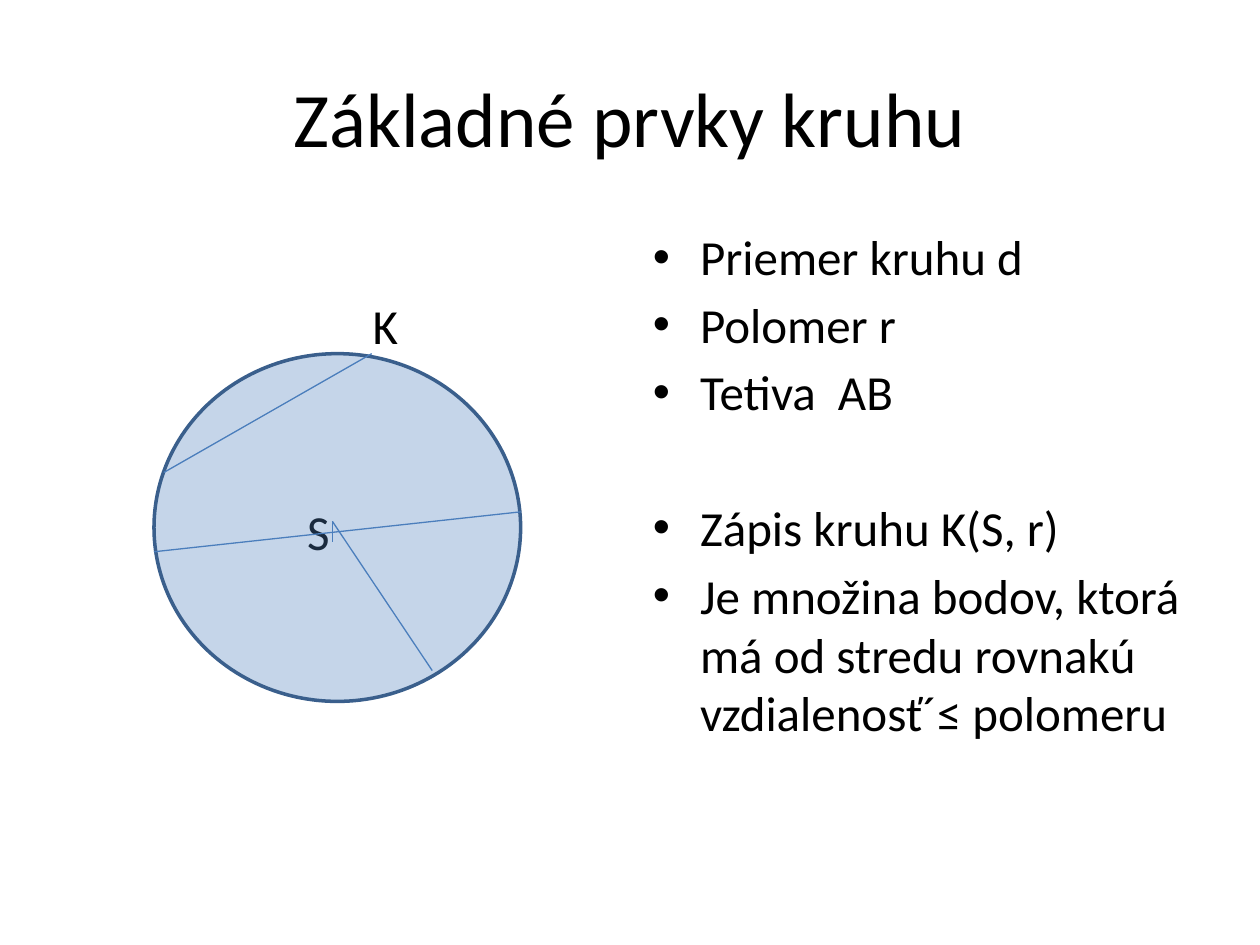
from dataclasses import dataclass

from lxml.etree import SubElement
from pptx import Presentation
from pptx.dml.color import RGBColor
from pptx.enum.shapes import MSO_CONNECTOR as Connector, MSO_SHAPE as Shape
from pptx.enum.text import MSO_ANCHOR as Anchor, PP_ALIGN as Align
from pptx.oxml.ns import qn
from pptx.util import Pt


@dataclass(frozen=True)
class Theme:
    font: str = "Calibri"
    title_size: float = 44
    body_size: float = 28
    text: RGBColor = RGBColor(0x00, 0x00, 0x00)
    background: RGBColor = RGBColor(0xFF, 0xFF, 0xFF)
    circle_fill: RGBColor = RGBColor(0x4F, 0x81, 0xBD)
    circle_line: RGBColor = RGBColor(0x3A, 0x5F, 0x8C)
    segment: RGBColor = RGBColor(0x4B, 0x7E, 0xBC)


@dataclass(frozen=True)
class Box:
    left: float
    top: float
    width: float
    height: float


@dataclass(frozen=True)
class Segment:
    start: tuple[float, float]
    end: tuple[float, float]


@dataclass(frozen=True)
class Item:
    text: str
    space_before: float = 5


@dataclass(frozen=True)
class Label:
    text: str
    left: float
    row: int


THEME = Theme()
ROW_PITCH = 39.3
GROUP_GAP = 44
BULLET_INDENT = 27
CIRCLE_OPACITY = 33

TITLE_BOX = Box(36, 21.6, 648, 90)
LIST_BOX = Box(366, 126, 318, 356.4)
CIRCLE_BOX = Box(88, 202.1, 209.5, 198.7)
CENTRE = (190, 298)

ITEMS = [
    Item("Priemer kruhu d"),
    Item("Polomer r"),
    Item("Tetiva  AB"),
    Item("Zápis kruhu K(S, r)", GROUP_GAP),
    Item("Je množina bodov, ktorá má od stredu rovnakú vzdialenosť´≤ polomeru"),
]
LABELS = [Label("K", 213, 1), Label("S", 175.5, 4)]
SEGMENTS = [
    Segment((88, 315.3), (297.5, 292.5)),
    Segment(CENTRE, (190, 309.6)),
    Segment(CENTRE, (247, 383.2)),
    Segment((93.6, 270), (212.4, 202.1)),
]


def add_text(slide, box: Box, items: list[Item], *, size: float,
             align=Align.LEFT, anchor=Anchor.TOP, bullets: bool = False,
             side_margin: float = 7.2) -> None:
    shape = slide.shapes.add_textbox(Pt(box.left), Pt(box.top), Pt(box.width), Pt(box.height))
    frame = shape.text_frame
    frame.word_wrap = True
    frame.vertical_anchor = anchor
    frame.margin_left = frame.margin_right = Pt(side_margin)
    for index, item in enumerate(items):
        paragraph = frame.paragraphs[0] if index == 0 else frame.add_paragraph()
        paragraph.alignment = align
        paragraph.space_before = Pt(item.space_before if index else 0)
        run = paragraph.add_run()
        run.text = item.text
        run.font.name = THEME.font
        run.font.size = Pt(size)
        run.font.color.rgb = THEME.text
        if bullets:
            properties = paragraph._p.get_or_add_pPr()
            properties.set("marL", str(Pt(BULLET_INDENT)))
            properties.set("indent", str(-Pt(BULLET_INDENT)))
            SubElement(properties, qn("a:buFont"), typeface="Arial")
            SubElement(properties, qn("a:buChar"), char="•")


def add_label(slide, label: Label) -> None:
    box = Box(label.left, LIST_BOX.top + label.row * ROW_PITCH, 30, 42)
    add_text(slide, box, [Item(label.text)], size=THEME.body_size, side_margin=0)


def add_circle(slide, box: Box) -> None:
    shape = slide.shapes.add_shape(
        Shape.OVAL, Pt(box.left), Pt(box.top), Pt(box.width), Pt(box.height))
    shape.shadow.inherit = False
    shape.fill.solid()
    shape.fill.fore_color.rgb = THEME.circle_fill
    color = shape._element.spPr.find(qn("a:solidFill")).find(qn("a:srgbClr"))
    SubElement(color, qn("a:alpha"), val=str(CIRCLE_OPACITY * 1000))
    shape.line.color.rgb = THEME.circle_line
    shape.line.width = Pt(2)


def add_segment(slide, segment: Segment) -> None:
    points = [Pt(value) for value in (*segment.start, *segment.end)]
    connector = slide.shapes.add_connector(Connector.STRAIGHT, *points)
    connector.line.color.rgb = THEME.segment
    connector.line.width = Pt(0.75)
    SubElement(connector._element.spPr, qn("a:effectLst"))


def main() -> None:
    presentation = Presentation()
    presentation.slide_width = Pt(720)
    presentation.slide_height = Pt(540)
    slide = presentation.slides.add_slide(presentation.slide_layouts[6])
    slide.background.fill.solid()
    slide.background.fill.fore_color.rgb = THEME.background

    add_text(slide, TITLE_BOX, [Item("Základné prvky kruhu")], size=THEME.title_size,
             align=Align.CENTER, anchor=Anchor.MIDDLE)
    for label in LABELS:
        add_label(slide, label)
    add_text(slide, LIST_BOX, ITEMS, size=THEME.body_size, bullets=True)
    add_circle(slide, CIRCLE_BOX)
    for segment in SEGMENTS:
        add_segment(slide, segment)
    presentation.save("out.pptx")


if __name__ == "__main__":
    main()
